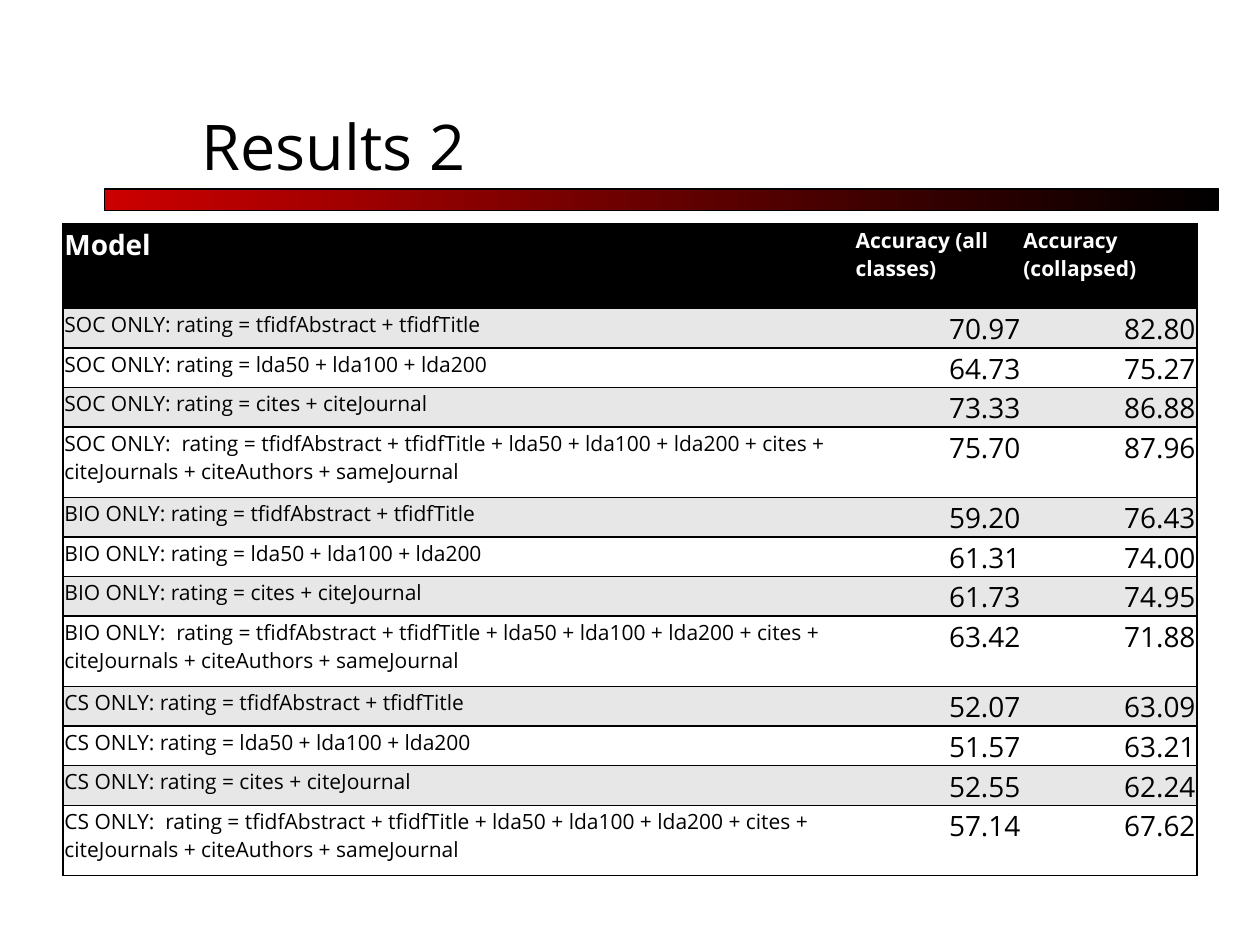
from dataclasses import dataclass

from lxml.etree import SubElement as Sub
from pptx import Presentation
from pptx.dml.color import RGBColor as Rgb
from pptx.enum.shapes import MSO_SHAPE as Shape
from pptx.enum.text import MSO_ANCHOR as Anchor
from pptx.enum.text import MSO_AUTO_SIZE as Fit
from pptx.enum.text import PP_ALIGN as Align
from pptx.oxml.ns import qn
from pptx.util import Cm, Pt


@dataclass(frozen=True)
class Theme:
    font: str = "Open Sans"
    black: str = "000000"
    white: str = "FFFFFF"
    gray: str = "E7E7E7"
    red: str = "CC0000"
    title: int = 36
    large: int = 16
    small: int = 12
    rule: float = 1
    edge: float = 0.75


HEADS = ["Model", "Accuracy (all classes)", "Accuracy (collapsed)"]
MODELS = [
    ": rating = tfidfAbstract + tfidfTitle",
    ": rating = lda50 + lda100 + lda200",
    ": rating = cites + citeJournal",
    ":  rating = tfidfAbstract + tfidfTitle + lda50 + lda100 + lda200"
    " + cites + citeJournals + citeAuthors + sameJournal",
]
SCORES = {
    "SOC": [("70.97", "82.80"), ("64.73", "75.27"),
            ("73.33", "86.88"), ("75.70", "87.96")],
    "BIO": [("59.20", "76.43"), ("61.31", "74.00"),
            ("61.73", "74.95"), ("63.42", "71.88")],
    "CS": [("52.07", "63.09"), ("51.57", "63.21"),
           ("52.55", "62.24"), ("57.14", "67.62")],
}
WIDTHS = [15.95, 3.38, 3.53]
HEAD_H, ROW_H, LONG_H = 1.7, 0.71, 1.42


class Page:
    def __init__(self, slide, theme):
        self.slide = slide
        self.theme = theme

    def style(self, frame, size, color, bold=False, align=Align.LEFT):
        for para in frame.paragraphs:
            para.alignment = align
            for run in para.runs:
                font = run.font
                font.name = self.theme.font
                font.size = Pt(size)
                font.bold = bold
                font.color.rgb = Rgb.from_string(color)

    def title(self, text, left, top, width, height):
        box = self.slide.shapes.title
        box.left, box.top = Cm(left), Cm(top)
        box.width, box.height = Cm(width), Cm(height)
        frame = box.text_frame
        frame.text = text
        frame.auto_size = Fit.NONE
        frame.vertical_anchor = Anchor.BOTTOM
        self.style(frame, self.theme.title, self.theme.black)

    def bar(self, left, top, width, height):
        bar = self.slide.shapes.add_shape(
            Shape.RECTANGLE, Cm(left), Cm(top), Cm(width), Cm(height))
        bar.shadow.inherit = False
        bar.fill.gradient()
        bar.fill.gradient_angle = 0
        ends = (self.theme.red, self.theme.black)
        for place, (stop, color) in enumerate(zip(bar.fill.gradient_stops, ends)):
            stop.position = place
            stop.color.rgb = Rgb.from_string(color)
        bar.line.color.rgb = Rgb.from_string(self.theme.black)
        bar.line.width = Pt(self.theme.edge)

    def border(self, cell, sides):
        """Rule the given sides (of L, R, T, B) and clear the others."""
        props = cell._tc.get_or_add_tcPr()
        for side in "LRTB":
            line = Sub(props, qn(f"a:ln{side}"), w=str(Pt(self.theme.rule)))
            if side in sides:
                fill = Sub(line, qn("a:solidFill"))
                Sub(fill, qn("a:srgbClr"), val=self.theme.black)
            else:
                Sub(line, qn("a:noFill"))

    def cell(self, cell, text, fill, sides, **style):
        self.border(cell, sides)
        cell.fill.solid()
        cell.fill.fore_color.rgb = Rgb.from_string(fill)
        cell.margin_left = cell.margin_right = cell.margin_top = Cm(0.03)
        cell.margin_bottom = 0
        cell.vertical_anchor = Anchor.TOP
        cell.text_frame.text = text
        self.style(cell.text_frame, **style)

    def table(self, rows, widths, heights, left, top):
        look = self.theme
        table = self.slide.shapes.add_table(
            len(rows), len(widths), Cm(left), Cm(top),
            Cm(sum(widths)), Cm(sum(heights))).table
        table.first_row = table.horz_banding = False
        for col, width in zip(table.columns, widths):
            col.width = Cm(width)
        for row, height in zip(table.rows, heights):
            row.height = Cm(height)
        edges = ["LTB"] + ["TB"] * (len(widths) - 2) + ["RTB"]
        for r, row in enumerate(rows):
            head = r == 0
            fill = look.black if head else look.gray if r % 2 else look.white
            color = look.white if head else look.black
            for c, text in enumerate(row):
                large = head == (c == 0)
                right = c > 0 and not head
                self.cell(table.cell(r, c), text, fill, edges[c],
                          size=look.large if large else look.small,
                          color=color, bold=head,
                          align=Align.RIGHT if right else Align.LEFT)


def main():
    deck = Presentation()
    deck.slide_width, deck.slide_height = Cm(25.4), Cm(19.05)
    page = Page(deck.slides.add_slide(deck.slide_layouts[5]), Theme())
    page.bar(2.11, 3.81, 22.45, 0.43)
    page.title("Results 2", 3.81, 1.07, 21.59, 2.74)
    rows = [HEADS] + [
        [f"{field} ONLY{model}", *pair]
        for field, pairs in SCORES.items()
        for model, pair in zip(MODELS, pairs)
    ]
    group = [ROW_H] * (len(MODELS) - 1) + [LONG_H]
    page.table(rows, WIDTHS, [HEAD_H] + group * len(SCORES), 1.27, 4.52)
    deck.save("out.pptx")


if __name__ == "__main__":
    main()
